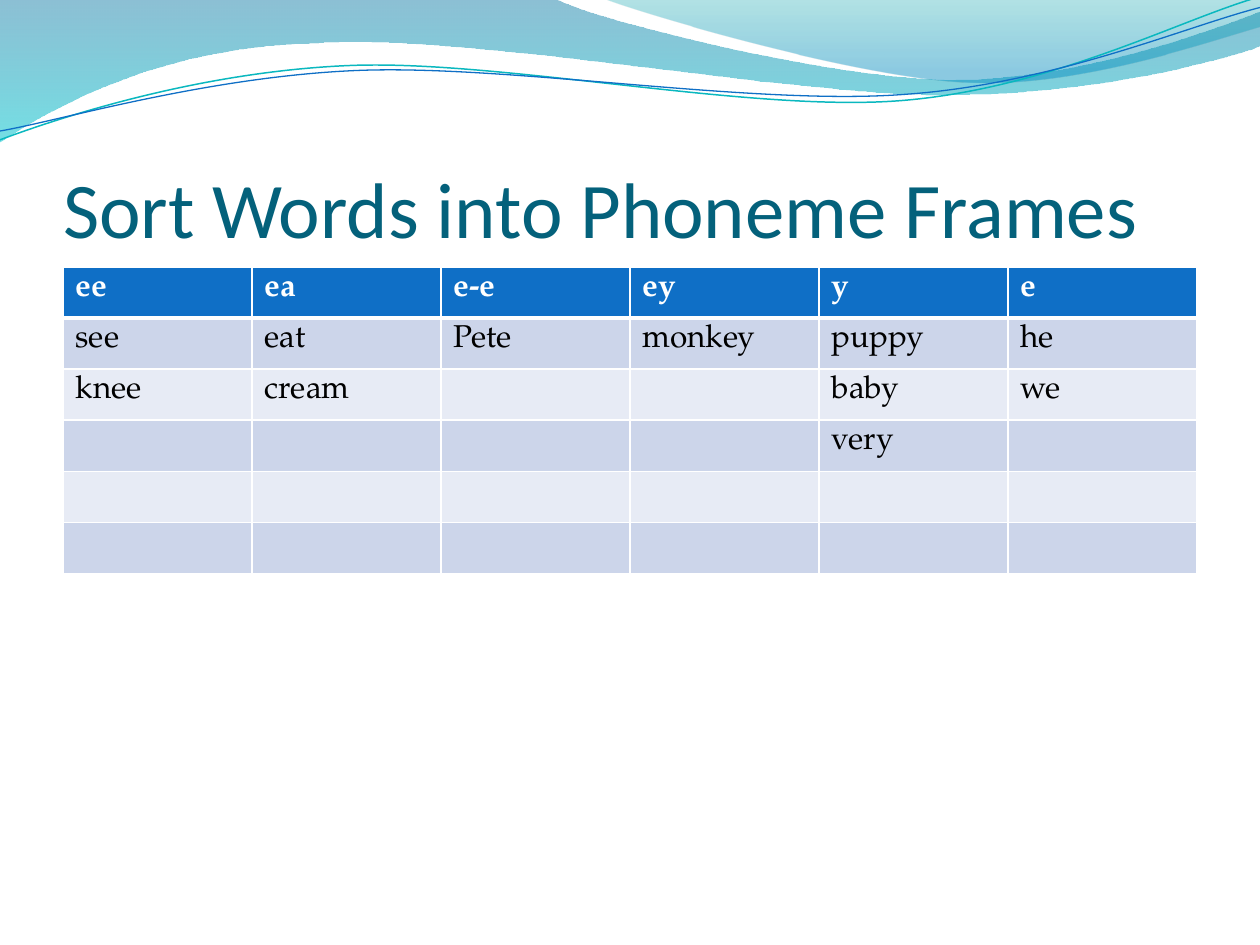
from math import cos, radians, sin

from lxml import etree
from pptx import Presentation
from pptx.dml.color import RGBColor
from pptx.enum.text import MSO_ANCHOR, MSO_AUTO_SIZE, PP_ALIGN
from pptx.oxml.ns import qn
from pptx.util import Inches, Pt

BOTTOM, LEFT = MSO_ANCHOR.BOTTOM, PP_ALIGN.LEFT
NO_AUTOFIT = MSO_AUTO_SIZE.NONE
TITLE_ONLY = 5
STRAND_TILT = -2.7
WHITE, BLACK, BLUE, TEAL = "FFFFFF", "000000", "0F6FC6", "0AB8BF"
BANDS = ["CCD5EA", "E7EBF5"]
TITLE = "Sort Words into Phoneme Frames"
WORDS = {
    "ee": ["see", "knee"],
    "ea": ["eat", "cream"],
    "e-e": ["Pete"],
    "ey": ["monkey"],
    "y": ["puppy", "baby", "very"],
    "e": ["he", "we"],
}
ROW_COUNT = 6

WAVES = [
    {
        "start": (0, 0),
        "segments": [
            [(4.4, -0.01)],
            [(4.76, 0.17), (6.64, 0.63), (7.58, 0.63)],
            [(8.53, 0.63), (9.58, 0.26), (10, 0.09)],
            [(10.01, 0.36)],
            [(9.83, 0.44), (8.7, 0.76), (7.46, 0.75)],
            [(6.22, 0.75), (3.82, 0.28), (2.57, 0.34)],
            [(1.29, 0.36), (0.46, 0.83), (-0.01, 1.13)],
        ],
        "stops": [(0, "0074A1", 45), (1, "00C6CF", 55)],
    },
    {
        "start": (4.79, -0.01),
        "segments": [
            [(5.09, 0.11), (6.82, 0.62), (7.69, 0.65)],
            [(8.56, 0.69), (9.61, 0.32), (10, 0.21)],
            [(10, 0)],
        ],
        "stops": [(0, "00A1A9", 30), (0.8, "008BBF", 45)],
    },
]
STRANDS = [
    {
        "start": (0, 1.11),
        "segments": [
            [(0.48, 0.93), (1.58, 0.57), (2.77, 0.52)],
            [(3.95, 0.47), (5.93, 0.89), (7.13, 0.8)],
            [(8.33, 0.71), (9.38, 0.15), (9.98, -0.02)],
        ],
        "line": (TEAL, 0.85),
        "center": (4.99, 0.57),
    },
    {
        "start": (0, 1.04),
        "segments": [
            [(0.47, 0.96), (1.64, 0.61), (2.83, 0.56)],
            [(4.03, 0.51), (5.97, 0.84), (7.17, 0.75)],
            [(8.36, 0.67), (9.41, 0.21), (10, 0.06)],
        ],
        "line": (BLUE, 0.75),
        "center": (5, 0.59),
    },
]


def color(value):
    """Turn a hex string into a colour."""
    return RGBColor.from_string(value)


def format_font(font, values):
    """Set font attributes and the colour from a dict."""
    for name, value in values.items():
        if name == "color":
            font.color.rgb = color(value)
        else:
            setattr(font, name, value)


def turn(point, center, degrees):
    """Turn a point clockwise about a center."""
    x, y = point[0] - center[0], point[1] - center[1]
    cosine, sine = cos(radians(degrees)), sin(radians(degrees))
    return center[0] + x * cosine - y * sine, center[1] + x * sine + y * cosine


def add_outline(slide, box, outline, close, tilt=0):
    """Draw one outline of lines and curves relative to the top left of the box."""
    left, top = box
    center = outline.get("center", (0, 0))
    points = [outline["start"], *(point for segment in outline["segments"] for point in segment)]
    points = [turn(point, center, -tilt) for point in points]
    points = [(left + Inches(x), top + Inches(y)) for x, y in points]
    builder = slide.shapes.build_freeform(*points[0])
    builder.add_line_segments(points[1:], close=close)
    shape = builder.convert_to_shape()
    shape.shadow.inherit = False
    shape.rotation = tilt
    steps = iter(list(shape.element.spPr.iter(qn("a:lnTo"))))
    for segment in outline["segments"]:
        group = [next(steps) for point in segment]
        if len(group) == 3:
            curve = etree.Element(qn("a:cubicBezTo"))
            group[0].addprevious(curve)
            for step in group:
                curve.append(step[0])
                step.getparent().remove(step)
    return shape


def add_waves(slide, box):
    """Draw the translucent waves and the thin strands in the box."""
    for wave in WAVES:
        shape = add_outline(slide, box, wave, True)
        shape.line.fill.background()
        shape.fill.gradient()
        shape.fill.gradient_angle = 270
        for stop, (position, value, opacity) in zip(shape.fill.gradient_stops, wave["stops"]):
            stop.position = position
            stop.color.rgb = color(value)
        tints = shape.element.spPr.iter(qn("a:srgbClr"))
        for tint, (position, value, opacity) in zip(tints, wave["stops"]):
            etree.SubElement(tint, qn("a:alpha"), val=str(opacity * 1000))
    for strand in STRANDS:
        shape = add_outline(slide, box, strand, False, STRAND_TILT)
        shape.fill.background()
        value, width = strand["line"]
        shape.line.color.rgb = color(value)
        shape.line.width = Pt(width)


def add_title(slide, box):
    """Fill the title placeholder and place it in the box."""
    title = slide.shapes.title
    for name, value in zip(("left", "top", "width", "height"), box):
        setattr(title, name, value)
    frame = title.text_frame
    frame.text = TITLE
    values = {
        "margin_left": 0, "margin_right": 0, "margin_top": Inches(0.05), "margin_bottom": 0,
        "vertical_anchor": BOTTOM, "word_wrap": True, "auto_size": NO_AUTOFIT,
    }
    for name, value in values.items():
        setattr(frame, name, value)
    paragraph = frame.paragraphs[0]
    paragraph.alignment = LEFT
    format_font(paragraph.runs[0].font, {"name": "Calibri", "size": Pt(45), "color": "04617B"})


def add_borders(cell, widths):
    """Give a cell white borders with the widths in points by side."""
    properties = cell._tc.get_or_add_tcPr()
    for side, width in widths.items():
        line = etree.SubElement(properties, qn(f"a:ln{side}"), w=str(Pt(width)))
        fill = etree.SubElement(line, qn("a:solidFill"))
        etree.SubElement(fill, qn("a:srgbClr"), val=WHITE)


def add_word_table(slide, box):
    """Build the table with one column of words for each spelling."""
    table = slide.shapes.add_table(ROW_COUNT, len(WORDS), *box).table
    for column_index, (spelling, words) in enumerate(WORDS.items()):
        texts = [spelling, *words]
        for row_index in range(ROW_COUNT):
            header = row_index == 0
            cell = table.cell(row_index, column_index)
            add_borders(cell, {"L": 1, "R": 1, "T": 3 if row_index == 1 else 1, "B": 3 if header else 1})
            cell.fill.solid()
            cell.fill.fore_color.rgb = color(BLUE if header else BANDS[(row_index - 1) % 2])
            if row_index < len(texts):
                cell.text = texts[row_index]
                format_font(cell.text_frame.paragraphs[0].runs[0].font, {
                    "name": "TeX Gyre Pagella", "size": Pt(18), "bold": header,
                    "color": WHITE if header else BLACK,
                })


def main():
    """Build and save the slide."""
    presentation = Presentation()
    presentation.slide_width, presentation.slide_height = Inches(10), Inches(7.5)
    slide = presentation.slides.add_slide(presentation.slide_layouts[TITLE_ONLY])
    add_waves(slide, (Inches(0), Inches(0)))
    add_title(slide, (Inches(0.5), Inches(0.77), Inches(9), Inches(1.25)))
    add_word_table(slide, (Inches(0.5), Inches(2.12), Inches(9), Inches(2.43)))
    presentation.save("out.pptx")


if __name__ == "__main__":
    main()
